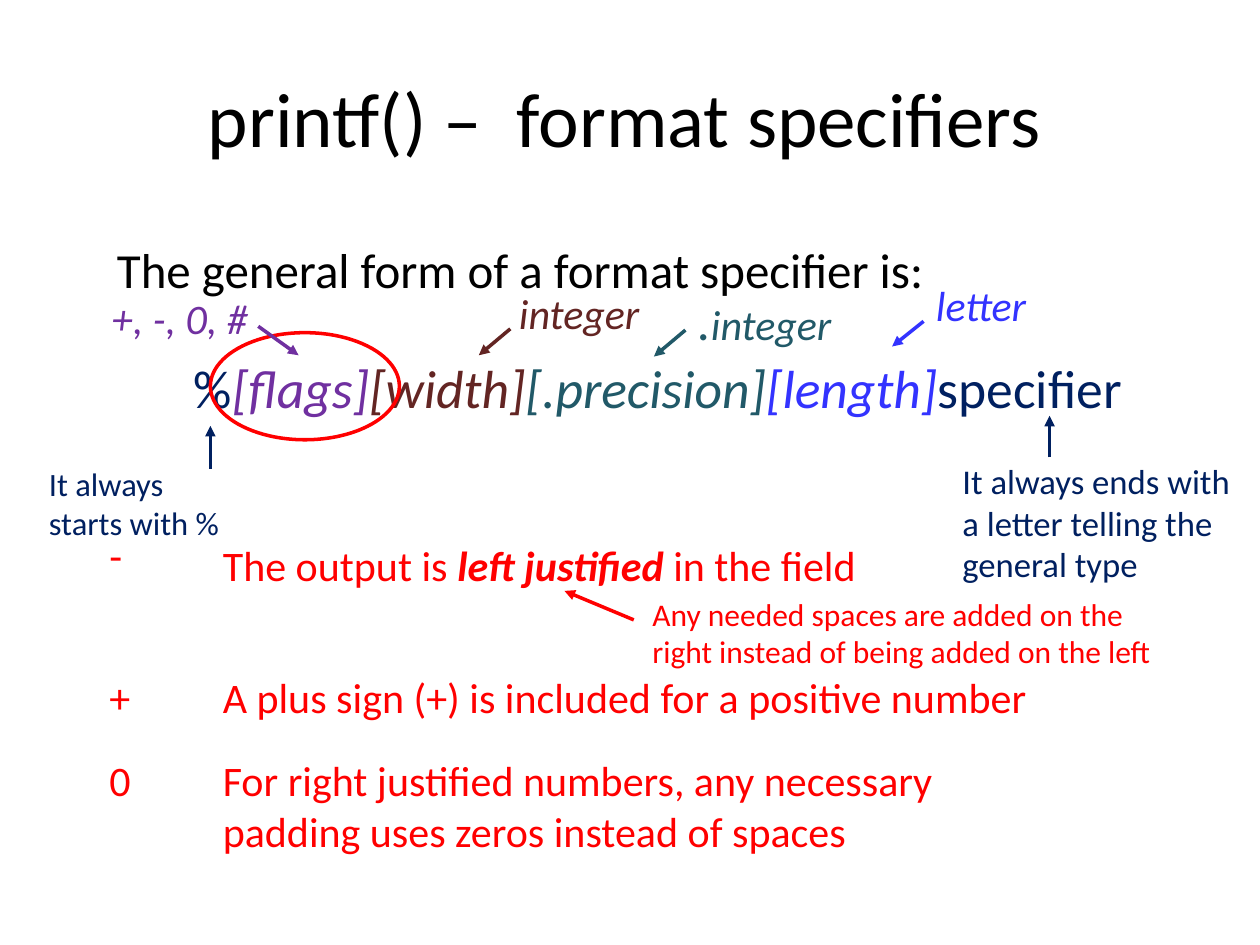
"""Build a slide that explains the parts of a printf() format specifier."""
from lxml import etree
from pptx import Presentation
from pptx import util as u
from pptx.dml.color import RGBColor
from pptx.enum import shapes, text
from pptx.oxml import ns

COLORS = {
    "black": "000000",
    "navy": "002060",
    "flags": "7030A0",
    "width": "632523",
    "precision": "215968",
    "length": "3333FF",
    "red": "FF0000",
}
FONT = "Calibri"


def rgb(name):
    return RGBColor.from_string(COLORS[name])


def add_text(s, box, size, runs, align=text.PP_ALIGN.LEFT, anchor=text.MSO_ANCHOR.TOP):
    """Add a text box of runs, each (text, color, style, optional size)."""
    sp = s.shapes.add_textbox(*(u.Inches(v) for v in box))
    tf = sp.text_frame
    tf.word_wrap = True
    tf.vertical_anchor = anchor
    p = tf.paragraphs[0]
    p.alignment = align
    for content, color, style, *own_size in runs:
        r = p.add_run()
        r.text = content
        r.font.name = FONT
        r.font.size = u.Pt(own_size[0] if own_size else size)
        r.font.bold = "b" in style
        r.font.italic = "i" in style
        r.font.color.rgb = rgb(color)


def add_arrow(s, start, end, color):
    """Add a straight arrow that points at end."""
    points = (u.Inches(v) for v in (*start, *end))
    sp = s.shapes.add_connector(shapes.MSO_CONNECTOR.STRAIGHT, *points)
    sp.line.color.rgb = rgb(color)
    sp.line.width = u.Pt(2)
    etree.SubElement(sp.line._get_or_add_ln(), ns.qn("a:tailEnd"), type="triangle")
    etree.SubElement(sp._element.spPr, ns.qn("a:effectLst"))


def add_ring(s, box, color):
    """Add an unfilled ellipse."""
    sp = s.shapes.add_shape(shapes.MSO_SHAPE.OVAL, *(u.Inches(v) for v in box))
    sp.shadow.inherit = False
    sp.fill.background()
    sp.line.color.rgb = rgb(color)
    sp.line.width = u.Pt(2)


def add_flag(s, symbol, symbol_top, top, width, runs):
    """Add a flag symbol with its explanation beside it."""
    add_text(s, (0.77, symbol_top, 0.43, 0.55), 24, [(symbol, "red", "")])
    add_text(s, (1.67, top, width, 0.53), 24, runs)


def main():
    prs = Presentation()
    prs.slide_width, prs.slide_height = u.Inches(10), u.Inches(7.5)
    s = prs.slides.add_slide(prs.slide_layouts[6])

    add_text(s, (0.17, 0.3, 9.58, 1.25), 44,
             [("printf() –  format specifiers", "black", "")],
             text.PP_ALIGN.CENTER, text.MSO_ANCHOR.MIDDLE)
    add_text(s, (1.44, 2.77, 7.92, 0.62), 30.6, [
        ("%", "navy", ""),
        ("[flags]", "flags", "i"),
        ("[width]", "width", "i"),
        ("[.precision]", "precision", "i"),
        ("[length]", "length", "i"),
        ("specifier", "navy", ""),
    ])
    add_ring(s, (1.67, 2.64, 1.5, 0.85), "red")

    notes = [
        ((0.83, 1.85, 8.25, 0.62), 28, "The general form of a format specifier is:", "black"),
        ((0.29, 3.63, 1.67, 0.62), 18.6, "It always starts with %", "navy"),
        ((7.54, 3.6, 2.33, 1.18), 19.8,
         "It always ends with a letter telling the general type", "navy"),
        ((5.08, 4.67, 4.4, 0.77), 18,
         "Any needed spaces are added on the right instead of being added on the left", "red"),
    ]
    for box, size, content, color in notes:
        add_text(s, box, size, [(content, color, "")])

    labels = [
        ((0.79, 2.27, 1.37, 0.51), [("+, -, 0, #", "flags", "i")]),
        ((4.02, 2.23, 1.27, 0.51), [("integer", "width", "i")]),
        ((5.44, 2.24, 1.27, 0.51),
         [(".", "precision", "i", 29.6), ("integer", "precision", "i")]),
        ((7.33, 2.17, 1.08, 0.51), [("letter", "length", "i")]),
    ]
    for box, runs in labels:
        add_text(s, box, 24, runs)

    arrows = [
        ((1.67, 3.72), (1.67, 3.38), "navy"),
        ((8.33, 3.63), (8.33, 3.3), "navy"),
        ((2.05, 2.59), (2.37, 2.82), "flags"),
        ((4.05, 2.61), (3.8, 2.82), "width"),
        ((5.44, 2.62), (5.19, 2.83), "precision"),
        ((7.33, 2.55), (7.08, 2.75), "length"),
        ((5.03, 4.92), (4.48, 4.69), "red"),
    ]
    for start, end, color in arrows:
        add_arrow(s, start, end, color)

    add_flag(s, "-", 4.15, 4.23, 5.51, [
        ("The output is ", "red", ""),
        ("left justified ", "red", "bi"),
        ("in the field", "red", ""),
    ])
    add_flag(s, "+", 5.28, 5.28, 6.73,
             [("A plus sign (+) is included for a positive number", "red", "")])
    add_flag(s, "0", 5.94, 5.94, 6.73,
             [("For right justified numbers, any necessary padding uses zeros "
               "instead of spaces", "red", "")])

    prs.save("out.pptx")


if __name__ == "__main__":
    main()
